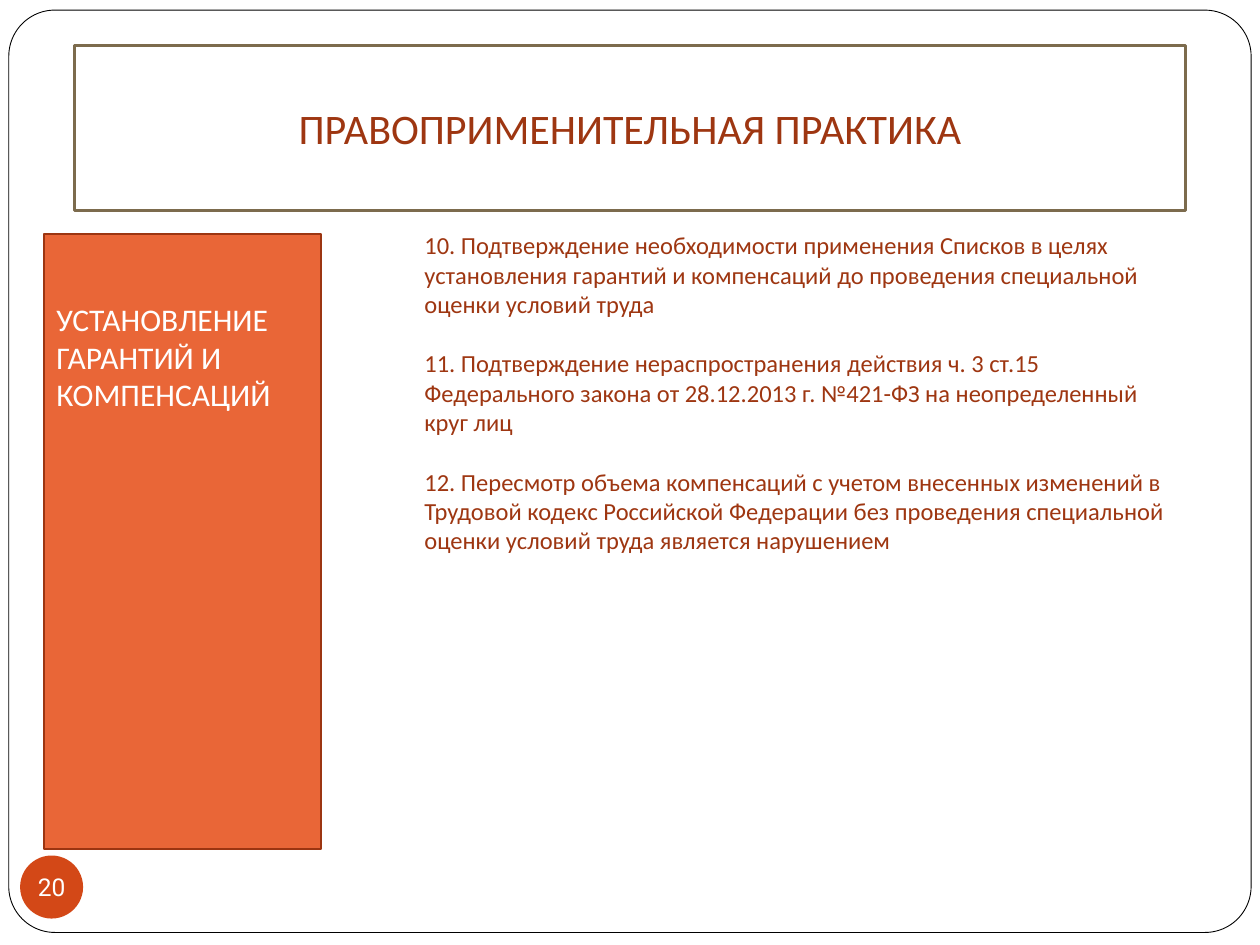
import pptx
import pptx.util
import pptx.dml.color
import pptx.enum.shapes
import pptx.enum.text

Inches = pptx.util.Inches
Pt = pptx.util.Pt
RGBColor = pptx.dml.color.RGBColor
Shapes = pptx.enum.shapes.MSO_SHAPE
Align = pptx.enum.text.PP_ALIGN
Anchor = pptx.enum.text.MSO_ANCHOR

WIDTH = Inches(10)
HEIGHT = Inches(7.5)

WHITE = RGBColor(0xFF, 0xFF, 0xFF)
BLACK = RGBColor(0x00, 0x00, 0x00)
ORANGE = RGBColor(0xE9, 0x66, 0x37)
BADGE_RED = RGBColor(0xD3, 0x48, 0x17)
RUST = RGBColor(0x9E, 0x36, 0x11)
PANEL_EDGE = RGBColor(0x9C, 0x35, 0x11)
TITLE_EDGE = RGBColor(0x7C, 0x6B, 0x4D)

PRACTICES = [
    "10. Подтверждение необходимости применения Списков в целях установления "
    "гарантий и компенсаций до проведения специальной оценки условий труда",
    "11. Подтверждение нераспространения действия ч. 3 ст.15 Федерального закона "
    "от 28.12.2013 г. №421-ФЗ на неопределенный круг лиц",
    "12. Пересмотр объема компенсаций с учетом внесенных изменений в Трудовой кодекс "
    "Российской Федерации без проведения специальной оценки условий труда является нарушением",
]


def place(left, top, width, height):
    shares = (left, top, width, height)
    sides = (WIDTH, HEIGHT, WIDTH, HEIGHT)
    return [round(share * side) for share, side in zip(shares, sides)]


def apply_format(target, values):
    for name, value in values.items():
        setattr(target, name, value)


def add_box(slide, kind, area, fill=None, line=None, line_width=1):
    shape = slide.shapes.add_shape(kind, *place(*area))
    shape.shadow.inherit = False
    if fill is None:
        shape.fill.background()
    else:
        shape.fill.solid()
        shape.fill.fore_color.rgb = fill
    if line is None:
        shape.line.fill.background()
    else:
        shape.line.color.rgb = line
        shape.line.width = Pt(line_width)
    return shape


def write_text(shape, texts, size, color, font="Calibri", align=Align.LEFT, gap=0, **frame_format):
    frame = shape.text_frame
    apply_format(frame, {"word_wrap": True, **frame_format})
    for index, text in enumerate(texts):
        paragraph = frame.add_paragraph() if index else frame.paragraphs[0]
        apply_format(paragraph, {"alignment": align, "space_before": Pt(gap if index else 0)})
        run = paragraph.add_run()
        apply_format(run, {"text": text})
        apply_format(run.font, {"size": Pt(size), "name": font})
        run.font.color.rgb = color


def add_text(slide, area, texts, size, color, **options):
    shape = slide.shapes.add_textbox(*place(*area))
    write_text(shape, texts, size, color, **options)


def add_badge(slide, area, number):
    badge = add_box(slide, Shapes.OVAL, area, fill=BADGE_RED)
    margins = dict.fromkeys(("margin_left", "margin_right", "margin_top", "margin_bottom"), 0)
    write_text(badge, [number], 14, WHITE, font="Roboto", align=Align.CENTER,
               **{**margins, "word_wrap": False, "vertical_anchor": Anchor.MIDDLE})


def main():
    presentation = pptx.Presentation()
    apply_format(presentation, {"slide_width": WIDTH, "slide_height": HEIGHT})
    slide = presentation.slides.add_slide(presentation.slide_layouts[6])

    border = add_box(slide, Shapes.ROUNDED_RECTANGLE, (0.007, 0.0107, 0.986, 0.976),
                     fill=WHITE, line=BLACK, line_width=0.5)
    border.adjustments[0] = 0.05

    add_badge(slide, (0.016, 0.9053, 0.05, 0.0667), "20")
    add_text(slide, (0.327, 0.2373, 0.614, 0.3587), PRACTICES, 14, RUST, gap=17)

    title = add_box(slide, Shapes.RECTANGLE, (0.059, 0.048, 0.882, 0.1747),
                    line=TITLE_EDGE, line_width=1.5)
    write_text(title, ["ПРАВОПРИМЕНИТЕЛЬНАЯ ПРАКТИКА"], 24, RUST,
               align=Align.CENTER, vertical_anchor=Anchor.MIDDLE)

    add_box(slide, Shapes.RECTANGLE, (0.035, 0.248, 0.22, 0.6507), fill=ORANGE, line=PANEL_EDGE)
    add_text(slide, (0.035, 0.3107, 0.197, 0.1347),
             ["УСТАНОВЛЕНИЕ ГАРАНТИЙ И КОМПЕНСАЦИЙ"], 18, WHITE)

    presentation.save("out.pptx")


if __name__ == "__main__":
    main()
